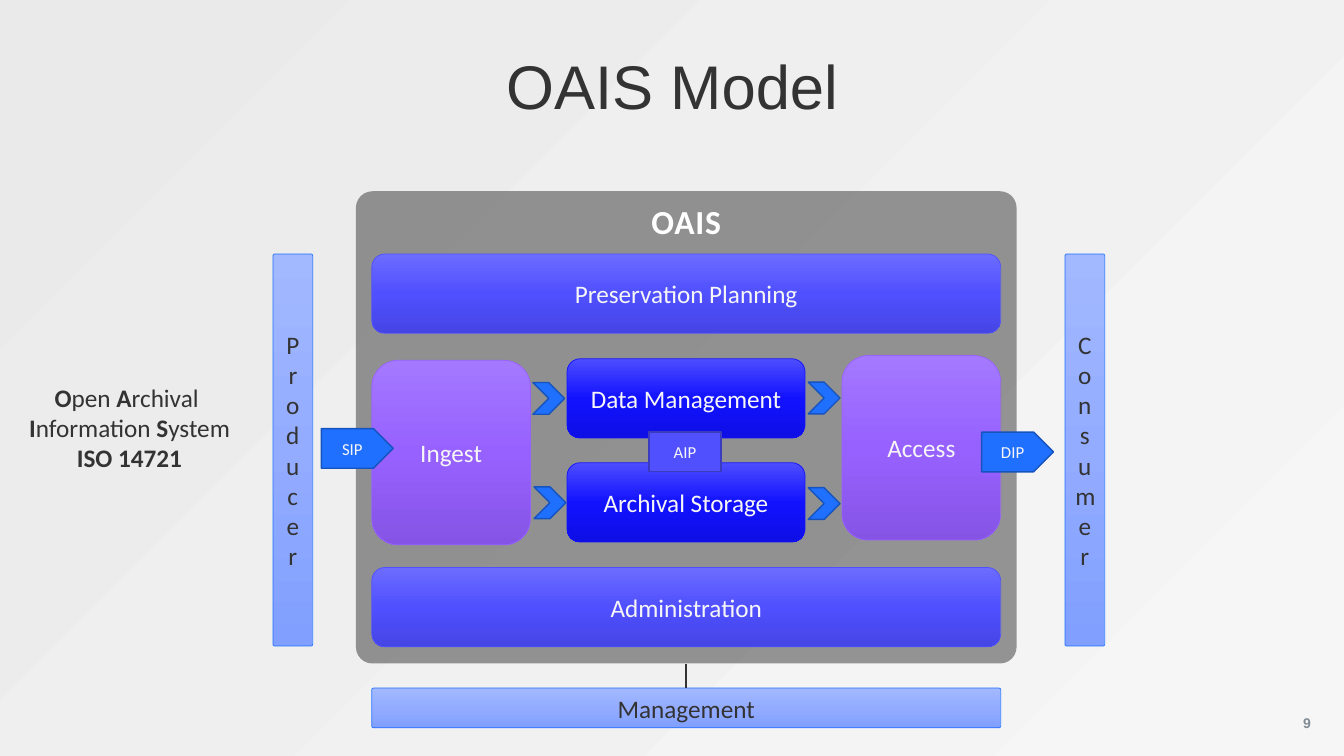
from copy import deepcopy
from dataclasses import dataclass
from typing import NamedTuple, Optional

from lxml.etree import SubElement
from pptx import Presentation
from pptx.dml.color import RGBColor
from pptx.dml.fill import FillFormat
from pptx.enum.shapes import MSO_CONNECTOR as Connector, MSO_SHAPE as Preset
from pptx.enum.text import MSO_ANCHOR as Anchor, MSO_AUTO_SIZE as AutoSize, PP_ALIGN as Align
from pptx.oxml.ns import qn
from pptx.slide import Slide
from pptx.text.text import TextFrame
from pptx.util import Cm, Length, Pt


@dataclass(frozen=True)
class Theme:
    heading_font: str = "Arial"
    body_font: str = "Calibri"
    dark: str = "333333"
    light: str = "F6F6F6"
    white: str = "FFFFFF"
    muted: str = "808B93"
    backdrop: tuple[str, ...] = ("EAEAEA", "F6F6F6")
    pale: tuple[str, ...] = ("A2B8FF", "93ACFF", "809FFF")
    violet: tuple[str, ...] = ("A479FF", "9761FF", "8554E5")
    deep: tuple[str, ...] = ("4D4DFF", "1212FF", "0E0EE5")
    indigo: tuple[str, ...] = ("6C6CFF", "5050FF", "4545E5")
    azure: str = "1F70FF"
    azure_edge: str = "1753BD"
    indigo_edge: str = "3B3BBD"
    title_size: float = 44
    panel_size: float = 24
    body_size: float = 18
    package_size: float = 12
    number_size: float = 10


THEME = Theme()
COLUMNS, ROWS = 33.87, 19.05


class Place(NamedTuple):
    column: float
    row: float
    columns: float
    rows: float

    def lengths(self) -> tuple[Length, ...]:
        return tuple(Cm(cells) for cells in self)


class Words(NamedTuple):
    text: str
    bold: bool = False


@dataclass(frozen=True)
class TextStyle:
    size: float = THEME.body_size
    color: str = THEME.light
    font: str = THEME.body_font
    spacing: int = 0


@dataclass(frozen=True)
class Look:
    fill: tuple[str, ...]
    edge: Optional[str] = None
    edge_width: float = 0.5
    preset: Preset = Preset.ROUNDED_RECTANGLE
    corner: Optional[float] = None
    opacity: int = 100
    text: TextStyle = TextStyle()
    anchor: Anchor = Anchor.MIDDLE
    stacked: bool = False


@dataclass(frozen=True)
class Block:
    place: Place
    look: Look
    words: Optional[Words] = None


DARK = TextStyle(color=THEME.dark)
SMALL = TextStyle(THEME.package_size)
PANEL = Look((THEME.dark,), corner=0.035, opacity=50, anchor=Anchor.TOP,
             text=TextStyle(THEME.panel_size, THEME.white, spacing=50))
PARTY = Look(THEME.pale, THEME.azure, corner=0.043, text=DARK, stacked=True)
BASE = Look(THEME.pale, THEME.azure, corner=0.043, text=DARK)
GATE = Look(THEME.violet, THEME.violet[1])
STORE = Look(THEME.deep, THEME.deep[1])
BAND = Look(THEME.indigo, THEME.indigo[1])
PACKAGE = Look((THEME.azure,), THEME.azure_edge, 1, Preset.PENTAGON, text=SMALL)
INNER_PACKAGE = Look((THEME.indigo[1],), THEME.indigo_edge, 1, Preset.RECTANGLE, text=SMALL)
STEP = Look((THEME.azure,), THEME.azure_edge, 1, Preset.CHEVRON)

LEFT, WIDTH, TOP = 9.37, 15.85, 6.4
MIDDLE = LEFT + WIDTH / 2
BASE_TOP, PANEL_BOTTOM = 17.34, 16.72

FRAME = (
    Block(Place(8.97, 4.82, 16.65, 11.9), PANEL, Words("OAIS", True)),
    Block(Place(6.88, TOP, 1, 9.88), PARTY, Words("Producer")),
    Block(Place(26.84, TOP, 1, 9.88), PARTY, Words("Consumer")),
    Block(Place(LEFT, BASE_TOP, WIDTH, 1), BASE, Words("Management")),
)
FUNCTIONS = (
    Block(Place(21.22, 8.96, 4, 4.65), GATE, Words("Access")),
    Block(Place(14.29, 9.04, 6, 2), STORE, Words("Data Management")),
    Block(Place(LEFT, TOP, WIDTH, 2), BAND, Words("Preservation Planning")),
    Block(Place(14.29, 11.66, 6, 2), STORE, Words("Archival Storage")),
    Block(Place(LEFT, 9.08, 4, 4.65), GATE, Words("Ingest")),
    Block(Place(LEFT, 14.3, WIDTH, 2), BAND, Words("Administration")),
    Block(Place(8.1, 10.8, 1.81, 1), PACKAGE, Words("SIP")),
    Block(Place(24.74, 10.89, 1.81, 1), PACKAGE, Words("DIP")),
    Block(Place(16.36, 10.89, 1.81, 1), INNER_PACKAGE, Words("AIP")),
)
STEPS = tuple(
    Block(Place(column, row, 0.8, 0.8), STEP)
    for column, row in ((13.43, 9.64), (13.46, 12.27), (20.37, 9.63), (20.37, 12.29))
)
DEFINITION = (
    (Words("O", True), Words("pen "), Words("A", True), Words("rchival ")),
    (Words("I", True), Words("nformation"), Words(" S", True), Words("ystem")),
    (Words("ISO 14721", True),),
)


def write(frame: TextFrame, lines: tuple[tuple[Words, ...], ...], style: TextStyle) -> None:
    frame.word_wrap = True
    for index, line in enumerate(lines):
        paragraph = frame.add_paragraph() if index else frame.paragraphs[0]
        paragraph.alignment = Align.CENTER
        for words in line:
            run = paragraph.add_run()
            run.text = words.text
            run.font.name = style.font
            run.font.size = Pt(style.size)
            run.font.bold = words.bold
            run.font.color.rgb = RGBColor.from_string(style.color)
            if style.spacing:
                run.font._element.set("spc", str(style.spacing))


def blend(fill: FillFormat, owner, colors: tuple[str, ...], angle: float) -> None:
    fill.gradient()
    fill.gradient_angle = angle
    stop_list = next(owner.iter(qn("a:gsLst")))
    while len(stop_list) < len(colors):
        stop_list.append(deepcopy(stop_list[-1]))
    for index, (stop, color) in enumerate(zip(fill.gradient_stops, colors)):
        stop.color.rgb = RGBColor.from_string(color)
        stop.position = index / (len(colors) - 1)


def draw_block(slide: Slide, block: Block) -> None:
    look = block.look
    shape = slide.shapes.add_shape(look.preset, *block.place.lengths())
    shape.shadow.inherit = False
    if look.corner is not None:
        shape.adjustments[0] = look.corner
    if len(look.fill) > 1:
        blend(shape.fill, shape.element, look.fill, 270)
    else:
        shape.fill.solid()
        shape.fill.fore_color.rgb = RGBColor.from_string(look.fill[0])
    if look.opacity < 100:
        color = shape.element.spPr.find(qn("a:solidFill"))[0]
        SubElement(color, qn("a:alpha")).set("val", str(look.opacity * 1000))
    if look.edge:
        shape.line.color.rgb = RGBColor.from_string(look.edge)
        shape.line.width = Pt(look.edge_width)
    else:
        shape.line.fill.background()
    if block.words:
        frame = shape.text_frame
        frame.vertical_anchor = look.anchor
        write(frame, ((block.words,),), look.text)
        if look.stacked:
            frame._element.bodyPr.set("vert", "wordArtVert")


def draw_link(slide: Slide) -> None:
    link = slide.shapes.add_connector(
        Connector.STRAIGHT, Cm(MIDDLE), Cm(BASE_TOP), Cm(MIDDLE), Cm(PANEL_BOTTOM))
    link.line.color.rgb = RGBColor.from_string(THEME.dark)
    link.line.width = Pt(1.5)
    SubElement(link.element.spPr, qn("a:effectLst"))


def draw_title(slide: Slide) -> None:
    title = slide.shapes.title
    title.left, title.top, title.width, title.height = Place(2.34, 1.02, 29.21, 2.46).lengths()
    title.text_frame.vertical_anchor = Anchor.MIDDLE
    write(title.text_frame, ((Words("OAIS Model"),),),
          TextStyle(THEME.title_size, THEME.dark, THEME.heading_font))
    title.text_frame.paragraphs[0].line_spacing = 0.9


def main() -> None:
    presentation = Presentation()
    presentation.slide_width, presentation.slide_height = Cm(COLUMNS), Cm(ROWS)
    slide = presentation.slides.add_slide(presentation.slide_layouts[5])
    blend(slide.background.fill, slide.element, THEME.backdrop, 315)
    draw_title(slide)
    number = slide.shapes.add_textbox(*Place(32.39, 17.81, 1.09, 0.81).lengths())
    number.text_frame.vertical_anchor = Anchor.MIDDLE
    write(number.text_frame, ((Words("9", True),),),
          TextStyle(THEME.number_size, THEME.muted, THEME.heading_font, -60))
    for block in FRAME:
        draw_block(slide, block)
    draw_link(slide)
    for block in FUNCTIONS + STEPS:
        draw_block(slide, block)
    definition = slide.shapes.add_textbox(*Place(-0.05, 9.5, 6.63, 2.56).lengths())
    write(definition.text_frame, DEFINITION, DARK)
    definition.text_frame.auto_size = AutoSize.SHAPE_TO_FIT_TEXT
    presentation.save("out.pptx")


if __name__ == "__main__":
    main()
